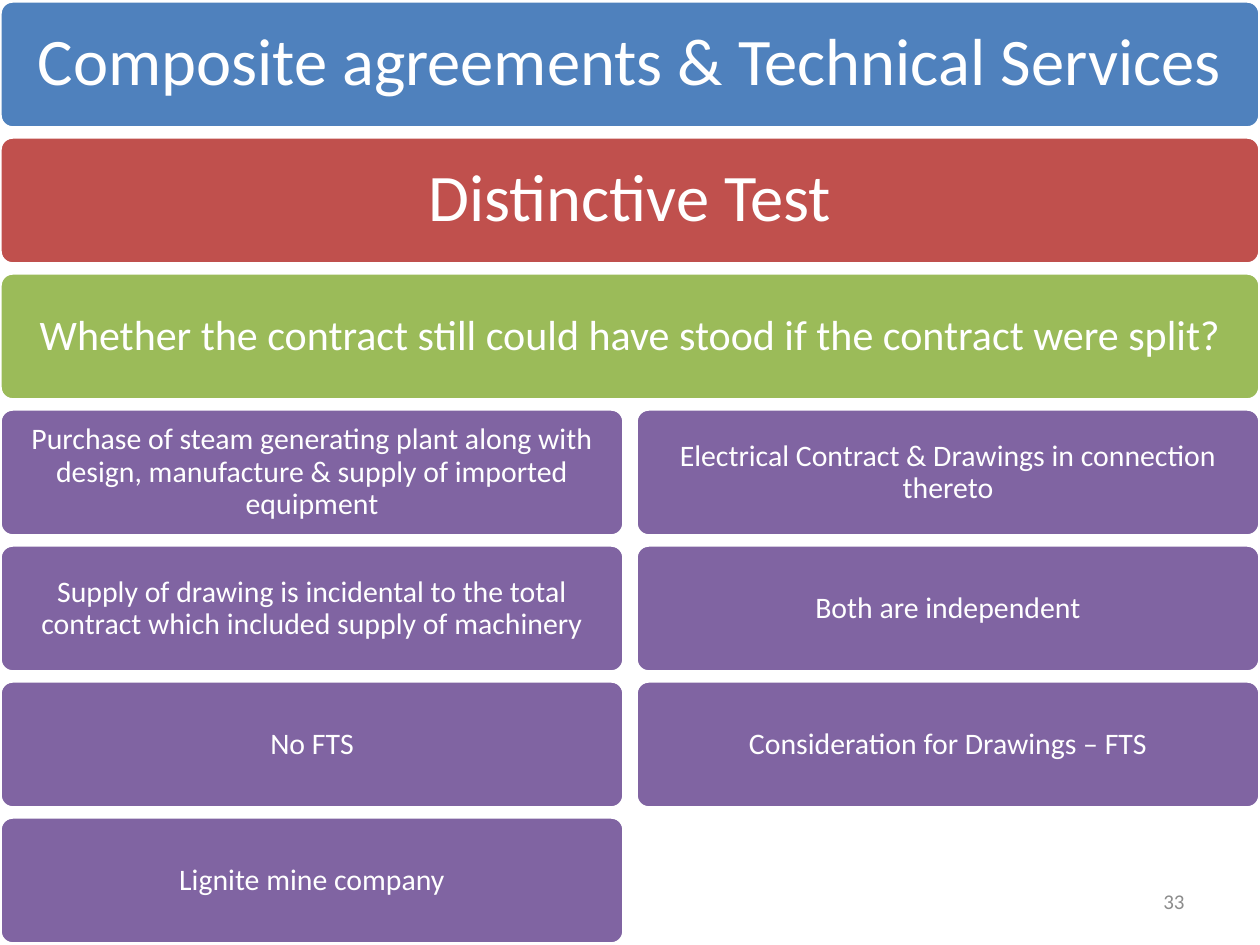
from pptx import Presentation
from pptx.dml.color import RGBColor
from pptx.enum.shapes import MSO_SHAPE as SHAPE
from pptx.enum.text import MSO_ANCHOR as ANCHOR, PP_ALIGN as ALIGN
from pptx.util import Emu, Pt

WHITE = RGBColor(0xFF, 0xFF, 0xFF)
BLUE = RGBColor(0x4F, 0x81, 0xBD)
RED = RGBColor(0xC0, 0x50, 0x4D)
GREEN = RGBColor(0x9B, 0xBB, 0x59)
PURPLE = RGBColor(0x80, 0x64, 0xA2)
GREY = RGBColor(0x8C, 0x8C, 0x8C)

WIDTH, HEIGHT = 1260, 945
ROW_TOP, ROW_H, ROW_PITCH = 1, 127, 136
COL_W = 624

BANNERS = [
    ("Composite agreements & Technical Services", BLUE, 38, 20),
    ("Distinctive Test", RED, 38, 20),
    ("Whether the contract still could have stood if the contract were split?", GREEN, 24, 13),
]
CASES = [
    [
        "Purchase of steam generating plant along with design, manufacture & supply of imported equipment",
        "Supply of drawing is incidental to the total contract which included supply of machinery",
        "No FTS",
        "Lignite mine company",
    ],
    [
        "Electrical Contract & Drawings in connection thereto",
        "Both are independent",
        "Consideration for Drawings – FTS",
    ],
]


def px(n):
    return Emu(round(n * 914400 / 126))


def set_text(sp, text, size, color, align):
    tf = sp.text_frame
    tf.word_wrap = True
    tf.vertical_anchor = ANCHOR.MIDDLE
    p = tf.paragraphs[0]
    p.text = text
    p.alignment = align
    p.font.name = "Calibri"
    p.font.size = Pt(size)
    p.font.color.rgb = color
    return tf


def add_block(slide, x, y, w, h, text, fill, size, inset):
    sp = slide.shapes.add_shape(SHAPE.ROUNDED_RECTANGLE, px(x), px(y), px(w), px(h))
    sp.adjustments[0] = 0.1
    sp.shadow.inherit = False
    sp.fill.solid()
    sp.fill.fore_color.rgb = fill
    sp.line.color.rgb = WHITE
    sp.line.width = Pt(2)
    tf = set_text(sp, text, size, WHITE, ALIGN.CENTER)
    tf.margin_left = tf.margin_right = tf.margin_top = tf.margin_bottom = px(inset)
    tf.paragraphs[0].line_spacing = 0.9


def add_banners(slide, x, y, w):
    for i, (text, fill, size, inset) in enumerate(BANNERS):
        add_block(slide, x, y + i * ROW_PITCH, w, ROW_H, text, fill, size, inset)


def add_case(slide, x, y, w, steps):
    for i, text in enumerate(steps):
        add_block(slide, x, y + i * ROW_PITCH, w, ROW_H, text, PURPLE, 17, 9)


def add_page_number(slide, x, y, w, h, number):
    sp = slide.shapes.add_textbox(px(x), px(y), px(w), px(h))
    set_text(sp, number, 12, GREY, ALIGN.RIGHT)


def main():
    prs = Presentation()
    prs.slide_width, prs.slide_height = px(WIDTH), px(HEIGHT)
    slide = prs.slides.add_slide(prs.slide_layouts[6])
    add_banners(slide, 0, ROW_TOP, WIDTH)
    cases_top = ROW_TOP + len(BANNERS) * ROW_PITCH
    for x, steps in zip((0, WIDTH - COL_W), CASES):
        add_case(slide, x, cases_top, COL_W, steps)
    add_page_number(slide, 903, 876, 294, 50, "33")
    prs.save("out.pptx")


if __name__ == "__main__":
    main()
